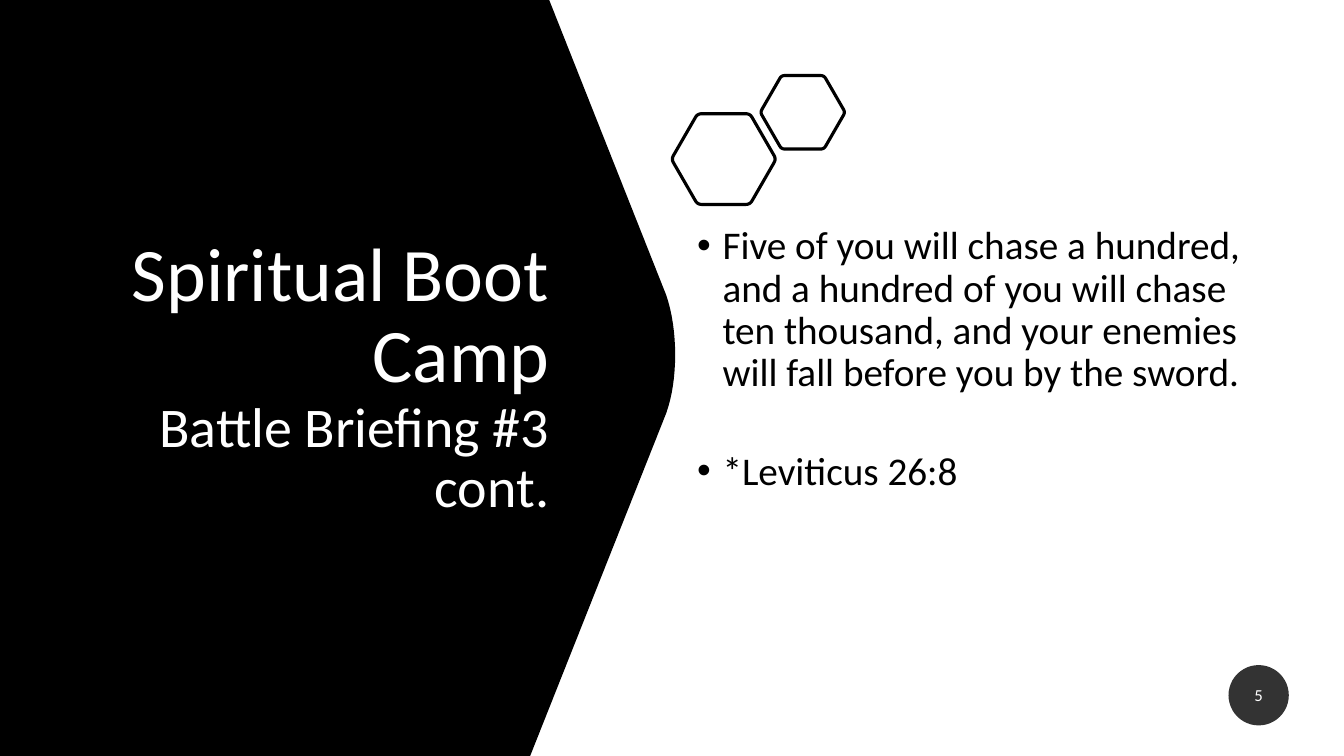
"""Build the Spiritual Boot Camp slide with its black panel and hexagons."""
from dataclasses import dataclass
from math import cos, pi, sin

from lxml.etree import SubElement
from pptx import Presentation
from pptx.dml.color import RGBColor as Color
from pptx.enum.shapes import MSO_SHAPE as Preset
from pptx.enum.text import MSO_ANCHOR as Anchor, PP_ALIGN as Align
from pptx.oxml.ns import qn
from pptx.util import Cm, Pt


@dataclass(frozen=True)
class Theme:
    font: str = "Calibri"
    black: Color = Color(0, 0, 0)
    white: Color = Color(255, 255, 255)
    title: int = 54
    subtitle: int = 40
    body: int = 28
    number: int = 12


theme = Theme()


def write(paragraph, text, size, color, align=Align.LEFT, spacing=1.0,
          before=0, after=0, bullet=None):
    paragraph.alignment = align
    paragraph.line_spacing = spacing
    paragraph.space_before, paragraph.space_after = Pt(before), Pt(after)
    run = paragraph.add_run()
    run.text = text
    run.font.name, run.font.size = theme.font, Pt(size)
    run.font.color.rgb = color
    if bullet:
        properties = paragraph._p.get_or_add_pPr()
        properties.set("marL", str(Cm(0.64)))
        properties.set("indent", str(-Cm(0.64)))
        SubElement(properties, qn("a:buFont")).set("typeface", "Arial")
        SubElement(properties, qn("a:buChar")).set("char", bullet)


def draw_outline(shapes, points):
    corners = [(Cm(x), Cm(y)) for x, y in points]
    builder = shapes.build_freeform(*corners[0], scale=1.0)
    builder.add_line_segments(corners[1:], close=True)
    shape = builder.convert_to_shape()
    shape.shadow.inherit = False
    return shape


presentation = Presentation()
presentation.slide_width, presentation.slide_height = Cm(33.87), Cm(19.05)
slide = presentation.slides.add_slide(presentation.slide_layouts[6])
slide.background.fill.solid()
slide.background.fill.fore_color.rgb = theme.white

nose = []
for step in range(17):
    t = step / 16
    bulge = 3 * t * (1 - t)
    nose.append((16.79 + bulge * 0.3,
                 7.44 * (1 - t) ** 3 + bulge * (8.31 * (1 - t) + 9.58 * t) + 10.41 * t ** 3))
panel = draw_outline(slide.shapes, [(0, 0), (13.84, 0), *nose, (13.36, 19.05), (0, 19.05)])
panel.fill.solid()
panel.fill.fore_color.rgb = theme.black
panel.line.fill.background()

title_box = slide.shapes.add_textbox(Cm(2.13), Cm(3.58), Cm(11.96), Cm(11.89))
title_frame = title_box.text_frame
title_frame.word_wrap, title_frame.vertical_anchor = True, Anchor.MIDDLE
title = title_frame.paragraphs[0]
write(title, "Spiritual Boot Camp", theme.title, theme.white, align=Align.RIGHT, spacing=0.9)
title.add_line_break()
write(title, "Battle Briefing #3 cont.", theme.subtitle, theme.white,
      align=Align.RIGHT, spacing=0.9)

hexagons = slide.shapes.add_group_shape()
rounding = 0.08
for center_x, center_y, radius in [(18.24, 4.01, 1.32), (20.23, 2.83, 1.07)]:
    vertices = [(center_x + radius * cos(k * pi / 3), center_y + radius * sin(k * pi / 3))
                for k in range(6)]
    points = []
    for k, vertex in enumerate(vertices):
        previous, following = vertices[k - 1], vertices[(k + 1) % 6]
        for step in range(7):
            t = step / 6
            back, ahead = rounding * (1 - t) ** 2, rounding * t ** 2
            points.append(tuple(v + back * (p - v) + ahead * (f - v)
                                for p, v, f in zip(previous, vertex, following)))
    hexagon = draw_outline(hexagons.shapes, points)
    hexagon.fill.background()
    hexagon.line.color.rgb = theme.black
    hexagon.line.width = Pt(2.25)

body_box = slide.shapes.add_textbox(Cm(17.32), Cm(6.63), Cm(14.4), Cm(6.15))
body_frame = body_box.text_frame
body_frame.word_wrap, body_frame.vertical_anchor = True, Anchor.MIDDLE
body_frame.margin_bottom = Cm(1.4)
verse = ("Five of you will chase a hundred, and a hundred of you will chase "
         "ten thousand, and your enemies will fall before you by the sword.")
write(body_frame.paragraphs[0], verse, theme.body, theme.black,
      spacing=0.9, before=10, bullet="•")
write(body_frame.add_paragraph(), "*Leviticus 26:8", theme.body, theme.black,
      spacing=0.9, before=40, bullet="•")

badge = slide.shapes.add_shape(Preset.OVAL, Cm(30.96), Cm(16.76), Cm(1.52), Cm(1.52))
badge.shadow.inherit = False
badge.fill.solid()
badge.fill.fore_color.rgb = theme.black
badge_color = badge._element.spPr.find(qn("a:solidFill")).find(qn("a:srgbClr"))
SubElement(badge_color, qn("a:alpha")).set("val", "80000")
badge.line.fill.background()
badge_frame = badge.text_frame
badge_frame.margin_left = badge_frame.margin_right = Cm(0)
badge_frame.vertical_anchor = Anchor.MIDDLE
write(badge_frame.paragraphs[0], "5", theme.number, theme.white, align=Align.CENTER, after=6)

presentation.save("out.pptx")
